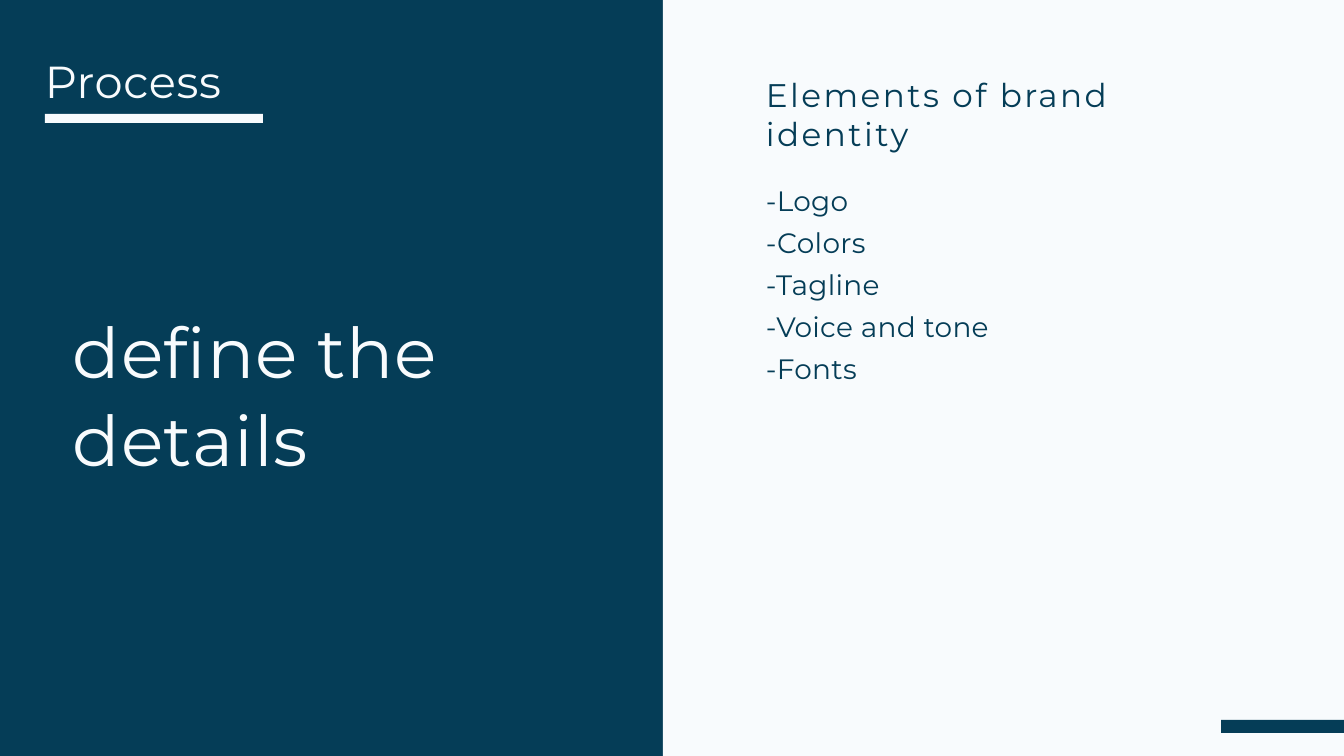
from pptx import Presentation
from pptx.dml.color import RGBColor
from pptx.enum.shapes import MSO_SHAPE
from pptx.enum.text import MSO_ANCHOR, MSO_AUTO_SIZE, PP_ALIGN
from pptx.util import Pt

RECTANGLE = MSO_SHAPE.RECTANGLE
TOP = MSO_ANCHOR.TOP
NO_AUTOFIT = MSO_AUTO_SIZE.NONE
LEFT = PP_ALIGN.LEFT

EMU_PER_PX = 914400 / 67.2
PAGE_WIDTH, PAGE_HEIGHT = 1344, 756
TITLE_ONLY = 5
COLORS = {"navy": "053D57", "ice": "F8FBFD"}


def px(length):
    return round(length * EMU_PER_PX)


class SlideBuilder:
    font = "Montserrat"

    def __init__(self, page):
        self.page = page

    def color(self, name):
        return RGBColor.from_string(COLORS[name])

    def background(self, color):
        fill = self.page.background.fill
        fill.solid()
        fill.fore_color.rgb = self.color(color)

    def bar(self, left, top, width, height, color):
        shape = self.page.shapes.add_shape(
            RECTANGLE, px(left), px(top), px(width), px(height))
        shape.shadow.inherit = False
        shape.fill.solid()
        shape.fill.fore_color.rgb = self.color(color)
        shape.line.fill.background()

    def title(self, left, top, width, height, line, **style):
        box = self.page.shapes.title
        box.left, box.top = px(left), px(top)
        box.width, box.height = px(width), px(height)
        self.fill_text(box.text_frame, [line], **style)

    def text(self, left, top, width, height, lines, **style):
        box = self.page.shapes.add_textbox(
            px(left), px(top), px(width), px(height))
        self.fill_text(box.text_frame, lines, **style)

    def fill_text(self, frame, lines, size, leading, tracking, color):
        frame.word_wrap = True
        frame.auto_size = NO_AUTOFIT
        frame.vertical_anchor = TOP
        frame.margin_left = frame.margin_right = 0
        frame.margin_top = frame.margin_bottom = 0
        for index, line in enumerate(lines):
            para = frame.add_paragraph() if index else frame.paragraphs[0]
            para.alignment = LEFT
            para.line_spacing = Pt(leading)
            para.space_before = Pt(0)
            span = para.add_run()
            span.text = line
            span.font.name = self.font
            span.font.size = Pt(size)
            span.font.color.rgb = self.color(color)
            span._r.get_or_add_rPr().set("spc", str(round(tracking * 100)))


def main():
    deck = Presentation()
    deck.slide_width, deck.slide_height = px(PAGE_WIDTH), px(PAGE_HEIGHT)
    slide = SlideBuilder(deck.slides.add_slide(deck.slide_layouts[TITLE_ONLY]))

    slide.background("navy")
    panel_left = 663
    slide.bar(panel_left, 0, PAGE_WIDTH - panel_left, PAGE_HEIGHT, "ice")

    slide.text(45, 19, 495, 81, ["Process"],
               size=48, leading=94.5, tracking=0.7, color="ice")
    slide.bar(45, 114, 218, 9, "ice")
    slide.title(73, 304, 495, 175, "define the details",
                size=75, leading=94.5, tracking=0.7, color="ice")

    slide.text(766, 75, 476, 77, ["Elements of brand identity"],
               size=35, leading=42, tracking=2.6, color="navy")
    elements = ["-Logo", "-Colors", "-Tagline", "-Voice and tone", "-Fonts"]
    slide.text(766, 175, 476, 206, elements,
               size=30, leading=45, tracking=0.3, color="navy")

    accent_left = 1221
    slide.bar(accent_left, 720, PAGE_WIDTH - accent_left, 13, "navy")

    deck.save("out.pptx")


if __name__ == "__main__":
    main()
